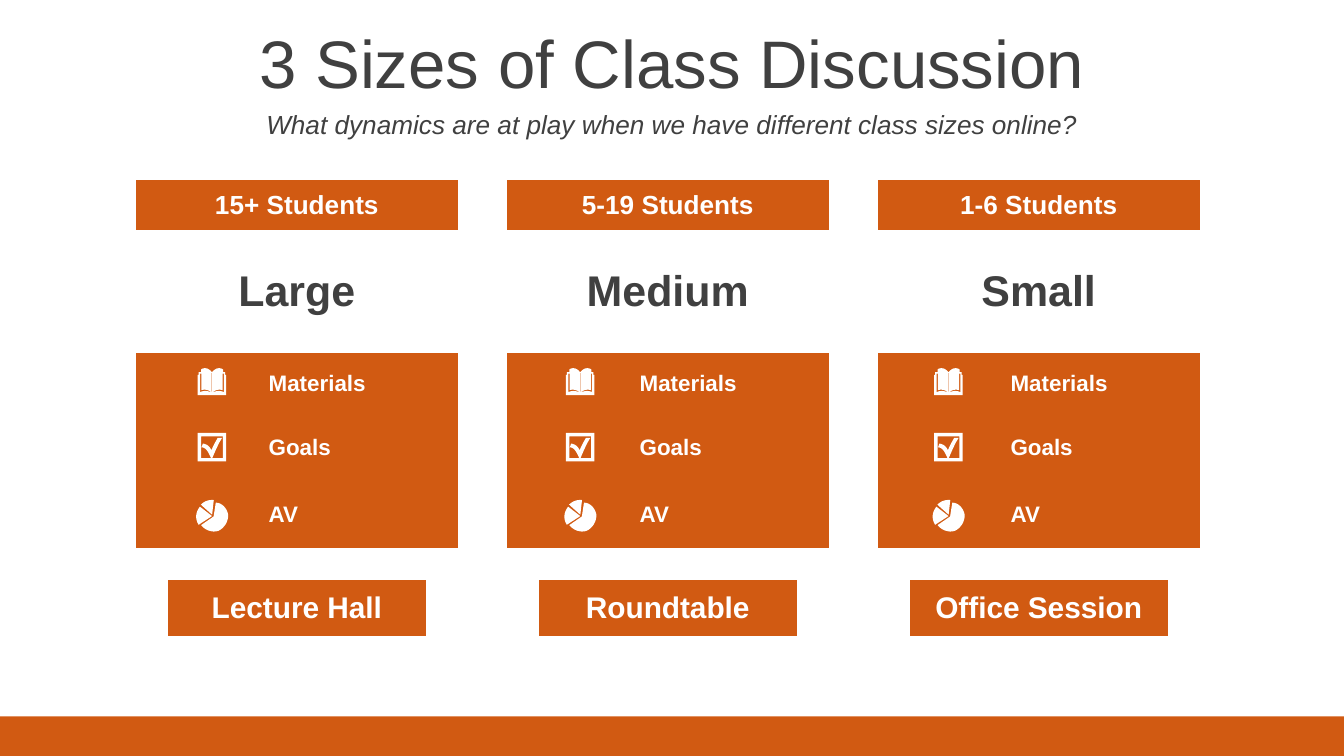
import lxml.etree
import pptx
import pptx.dml.color
import pptx.enum.shapes
import pptx.enum.text
import pptx.oxml.ns
import pptx.util

Inches = pptx.util.Inches
RGB = pptx.dml.color.RGBColor
ALIGN = pptx.enum.text.PP_ALIGN
MIDDLE = pptx.enum.text.MSO_ANCHOR.MIDDLE
qn = pptx.oxml.ns.qn

ORANGE = RGB(0xD1, 0x5A, 0x12)
WHITE = RGB(0xFF, 0xFF, 0xFF)
GREY = RGB(0x40, 0x40, 0x40)
NO_GRID = "{2D5ABB26-0587-4C30-8999-92F81FD0307C}"

WIDE = 10
HIGH = WIDE * 9 / 16
COLS = [0.22, 0.65, 1.27, 0.22]
ROWS = [0.37, 0.92, 0.45, 0.5, 0.5, 0.24, 0.41, 0.24]
TOPICS = ["Materials", "Goals", "AV"]
SIZES = [
    ("15+ Students", "Large", "Lecture Hall"),
    ("5-19 Students", "Medium", "Roundtable"),
    ("1-6 Students", "Small", "Office Session"),
]

# Outlines in hundredths of an inch: pairs are corners, sixes are Bezier curves.
BOOK = [
    [(10.7, 3), (12.5, 1, 14, 0, 16, 0), (17, 0, 18, 0.2, 19, 1), (19, 3),
     (20.5, 3), (20.5, 5), (21.3, 5), (21.3, 20), (0, 20), (0, 5), (0.8, 5),
     (0.8, 3), (2.6, 3), (2.6, 1), (3.5, 0.2, 4.5, 0, 5.5, 0),
     (7.5, 0, 9, 1, 10.7, 3)],
    [(10.5, 18), (8, 16, 5, 15.5, 2.8, 16.4), (2.8, 4), (2, 4), (2, 17.8),
     (5, 16.4, 7, 16.8, 10.5, 18)],
    [(10.9, 18), (14.5, 16.8, 16.5, 16.4, 19.5, 17.8), (19.5, 4), (18.7, 4),
     (18.7, 16.4), (16.5, 15.5, 13.5, 16, 10.9, 18)],
    [(10.5, 3.5), (10.9, 3.5), (10.9, 17.5), (10.5, 17.5)],
]
CHECK = [
    [(0, 0), (21.3, 0), (21.3, 21.3), (0, 21.3)],
    [(2.6, 2.6), (2.6, 18.8), (10, 18.8), (8.6, 16, 7, 11, 3, 10.8),
     (4, 8), (7.5, 8.8, 8.8, 10, 10.3, 13), (12, 9, 13.3, 6.8, 15, 3.8),
     (18.3, 3.8), (15.5, 8, 13, 14, 11, 18.8), (18.8, 18.8), (18.8, 2.6)],
]
PIE = [
    [(2.8, 5), (11.8, 12), (1.8, 18.5), (-1, 14, -0.5, 9, 2.8, 5)],
    [(14.6, 2), (19, 2, 23, 6, 23.8, 11), (24, 16, 21, 21, 16.5, 23),
     (12, 24.5, 6.5, 22.5, 3.7, 18.7), (13, 12.3)],
    [(11.8, 0), (12.2, 0, 12.7, 0, 13.1, 0.1), (11.9, 11), (3.5, 3.5),
     (5.7, 1.2, 8.7, 0, 11.8, 0)],
]
ICONS = [(BOOK, 0.01, 0), (CHECK, 0.01, 0.48), (PIE, 0, 0.98)]


def put(frame, text, size, color, bold=False, italic=False, align=ALIGN.CENTER):
    par = frame.paragraphs[0]
    par.alignment = align
    run = par.add_run()
    run.text = text
    font = run.font
    font.name = "Arial"
    font.size = pptx.util.Pt(size)
    font.bold = bold
    font.italic = italic
    font.color.rgb = color


def paint(shape, color):
    shape.shadow.inherit = False
    shape.fill.solid()
    shape.fill.fore_color.rgb = color
    shape.line.fill.background()


def trace(path):
    """Turn corners and curves into a list of whole-number points."""
    pts = []
    for step in path:
        if len(step) == 2:
            pts.append(step)
            continue
        ends = [pts[-1], step[:2], step[2:4], step[4:]]
        for i in range(1, 9):
            t = i / 8
            mix = [(1 - t) ** 3, 3 * t * (1 - t) ** 2, 3 * t * t * (1 - t), t ** 3]
            pts.append(tuple(sum(m * e[k] for m, e in zip(mix, ends))
                             for k in (0, 1)))
    return [(round(x * 100), round(y * 100)) for x, y in pts]


def icon(slide, paths, left, top):
    first, *rest = [trace(path) for path in paths]
    pen = slide.shapes.build_freeform(*first[0], scale=Inches(1) / 10000)
    pen.add_line_segments(first[1:], close=True)
    for pts in rest:
        pen.move_to(*pts[0])
        pen.add_line_segments(pts[1:], close=True)
    paint(pen.convert_to_shape(Inches(left), Inches(top)), WHITE)


def header(slide, left, top, width):
    title = slide.shapes.title
    title.left, title.top = Inches(left), Inches(top)
    title.width, title.height = Inches(width), Inches(0.63)
    sub = slide.shapes.add_textbox(Inches(left), Inches(top + 0.63),
                                   Inches(width), Inches(0.31))
    for box in (title, sub):
        box.text_frame.word_wrap = True
        box.text_frame.vertical_anchor = MIDDLE
    put(title.text_frame, "3 Sizes of Class Discussion", 36, GREY)
    put(sub.text_frame,
        "What dynamics are at play when we have different class sizes online?",
        14, GREY, italic=True)


def card(slide, left, top, count, name, room):
    """Place the table for one class size."""
    table = slide.shapes.add_table(
        len(ROWS), len(COLS), Inches(left), Inches(top),
        Inches(sum(COLS)), Inches(sum(ROWS))).table
    table.first_row = table.horz_banding = False
    table._tbl.tblPr.find(qn("a:tableStyleId")).text = NO_GRID
    for col, width in zip(table.columns, COLS):
        col.width = Inches(width)
    for row, height in zip(table.rows, ROWS):
        row.height = Inches(height)

    cell = table.cell
    for row in (0, 1, 5, 6, 7):
        cell(row, 1).merge(cell(row, 2))
    for col in (0, 3):
        cell(2, col).merge(cell(4, col))

    texts = {(0, 1): (count, 14, WHITE), (1, 1): (name, 23, GREY),
             (6, 1): (room, 16, WHITE)}
    for i, topic in enumerate(TOPICS):
        texts[2 + i, 2] = (topic, 12, WHITE, ALIGN.LEFT)

    for r in range(len(ROWS)):
        for c in range(len(COLS)):
            item = cell(r, c)
            full = r in (0, 2, 3, 4) or (r == 6 and c in (1, 2))
            item.fill.solid()
            item.fill.fore_color.rgb = ORANGE if full else WHITE
            item.vertical_anchor = MIDDLE
            if (r, c) in texts:
                text, size, color, *align = texts[r, c]
                put(item.text_frame, text, size, color, bold=True,
                    align=align[0] if align else ALIGN.CENTER)
            else:
                # Small type keeps empty rows from growing
                par = item.text_frame.paragraphs[0]
                lxml.etree.SubElement(par._p, qn("a:endParaRPr"), sz="800")


def icons(slide, left, top):
    for paths, dx, dy in ICONS:
        icon(slide, paths, left + dx, top + dy)


def footer(slide, left, top, width, height):
    bar = slide.shapes.add_shape(
        pptx.enum.shapes.MSO_SHAPE.RECTANGLE, Inches(left), Inches(top),
        Inches(width), Inches(height))
    paint(bar, ORANGE)


def main():
    deck = pptx.Presentation()
    deck.slide_width, deck.slide_height = Inches(WIDE), Inches(HIGH)
    slide = deck.slides.add_slide(deck.slide_layouts[5])
    footer(slide, 0, 5.33, WIDE, HIGH - 5.33)
    header(slide, 0, 0.14, WIDE)
    for i, texts in enumerate(SIZES):
        card(slide, 1.01 + 2.76 * i, 1.34, *texts)
    for i in range(len(SIZES)):
        icons(slide, 1.46 + 2.74 * i, 2.74)
    deck.save("out.pptx")


if __name__ == "__main__":
    main()
